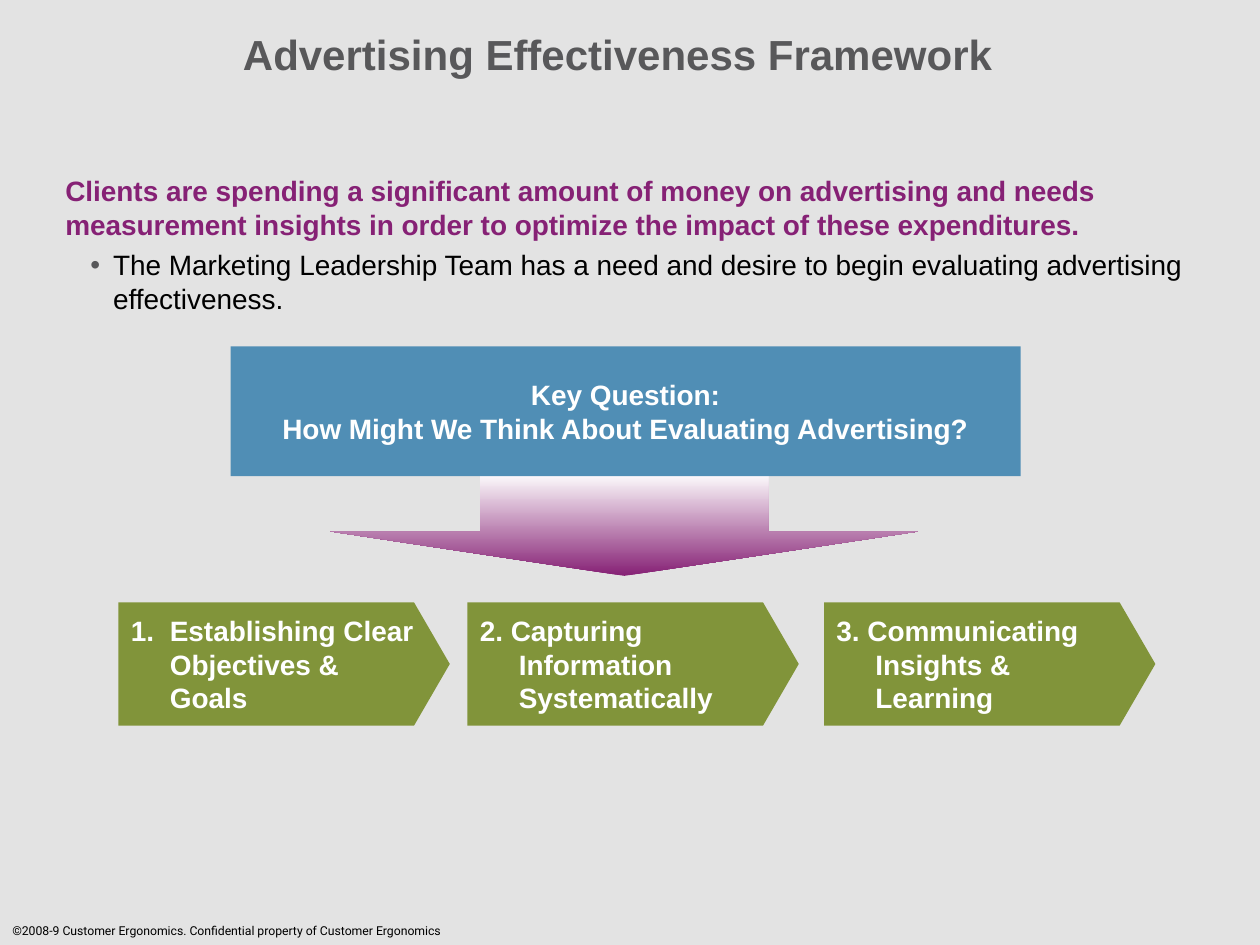
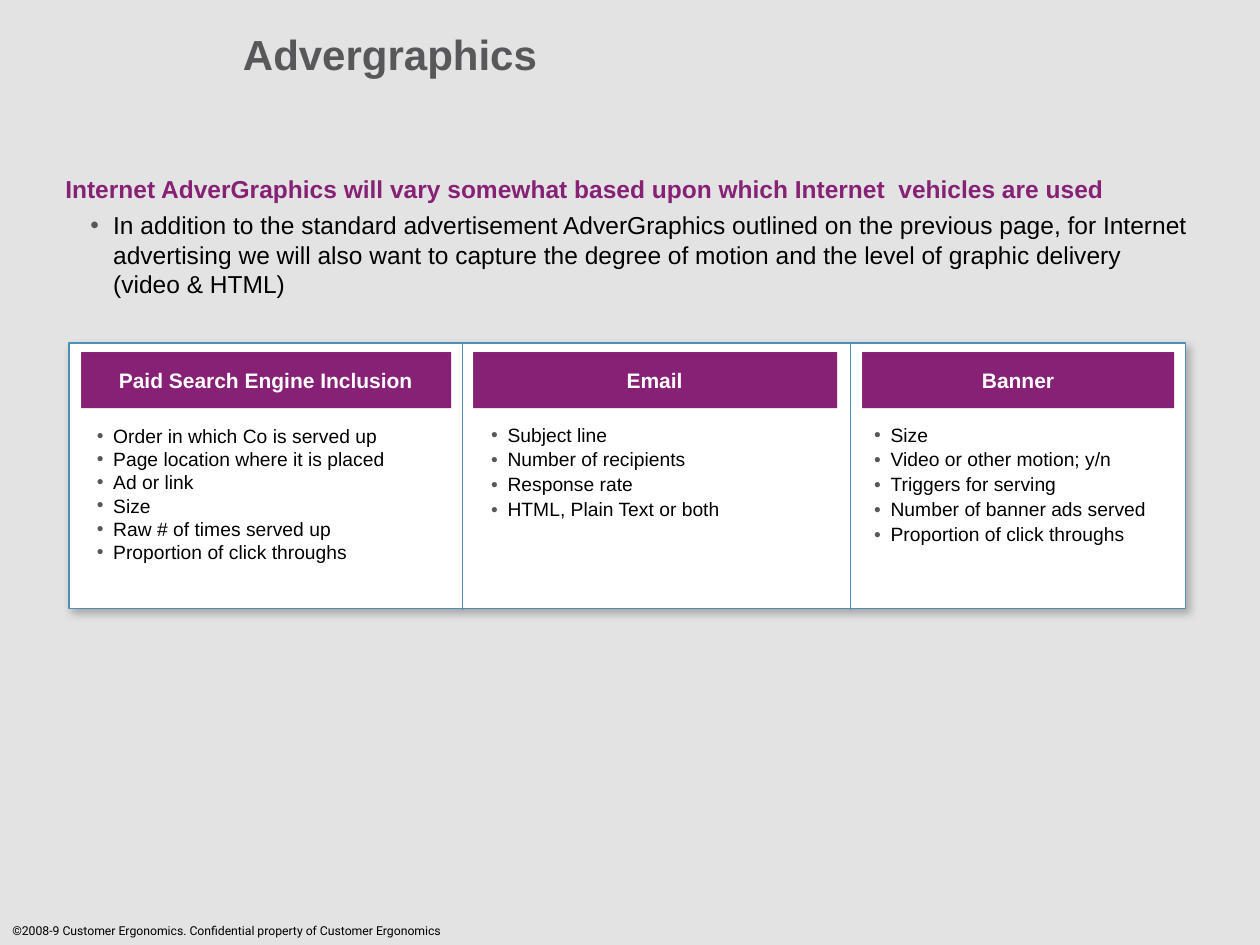
from lxml import etree
from pptx import Presentation
from pptx.dml.color import RGBColor
from pptx.enum.shapes import MSO_CONNECTOR, MSO_SHAPE
from pptx.enum.text import MSO_ANCHOR, PP_ALIGN
from pptx.oxml import parse_xml
from pptx.oxml.ns import nsdecls, qn
from pptx.util import Inches, Pt

BACKGROUND = "E3E3E3"
GRAY = "58585A"
PURPLE = "862175"
BLUE = "508EB5"
GREEN = "81943A"
BLACK = "000000"
WHITE = "FFFFFF"
FONT = "Arial"
FOOTER = "©2008-9 Customer Ergonomics. Confidential property of Customer Ergonomics"


def rgb(value):
    return RGBColor.from_string(value)


# Text
def add_run(p, text, size, color, bold=False, font=FONT):
    for i, line in enumerate(text.split("\n")):
        if i:
            p.add_line_break()
        r = p.add_run()
        r.text = line
        r.font.name = font
        r.font.size = Pt(size)
        r.font.bold = bold
        r.font.color.rgb = rgb(color)


def set_indent(p, left, first):
    pPr = p._p.get_or_add_pPr()
    pPr.set("marL", str(Inches(left)))
    pPr.set("indent", str(Inches(first)))
    return pPr


def set_bullet(p, left, first):
    pPr = set_indent(p, left, first)
    color = etree.SubElement(pPr, qn("a:buClr"))
    etree.SubElement(color, qn("a:srgbClr")).set("val", GRAY)
    etree.SubElement(pPr, qn("a:buFont")).set("typeface", FONT)
    etree.SubElement(pPr, qn("a:buChar")).set("char", "•")


def add_textbox(s, x, y, w, h):
    tf = s.shapes.add_textbox(Inches(x), Inches(y), Inches(w), Inches(h)).text_frame
    tf.word_wrap = True
    return tf


def add_body(s, heading, point, size):
    tf = add_textbox(s, 0.42, 1.33, 9.17, 1.3)
    add_run(tf.paragraphs[0], heading, size, PURPLE, bold=True)
    p = tf.add_paragraph()
    set_bullet(p, 0.38, -0.18)
    p.space_before = Pt(4)
    add_run(p, point, size, BLACK)


def add_list(s, x, y, w, h, items, line_spacing, gap):
    tf = add_textbox(s, x, y, w, h)
    for i, item in enumerate(items):
        p = tf.add_paragraph() if i else tf.paragraphs[0]
        set_bullet(p, 0.13, -0.13)
        p.line_spacing = line_spacing
        if i:
            p.space_before = Pt(gap)
        add_run(p, item, 11, BLACK)


# Shapes
def add_shape(s, kind, x, y, w, h, fill, adjustments=()):
    sp = s.shapes.add_shape(kind, Inches(x), Inches(y), Inches(w), Inches(h))
    for i, value in enumerate(adjustments):
        sp.adjustments[i] = value
    sp.shadow.inherit = False
    sp.fill.solid()
    sp.fill.fore_color.rgb = rgb(fill)
    sp.line.fill.background()
    return sp


def add_label(sp, text, size, align=PP_ALIGN.CENTER, wrap=False):
    tf = sp.text_frame
    tf.word_wrap = wrap
    tf.vertical_anchor = MSO_ANCHOR.MIDDLE
    p = tf.paragraphs[0]
    p.alignment = align
    add_run(p, text, size, WHITE, bold=True)
    return p


def add_gradient(sp, *colors):
    sp.fill.gradient()
    sp.fill.gradient_angle = 90
    for stop, color in zip(sp.fill.gradient_stops, colors):
        stop.color.rgb = rgb(color)


def add_drop_shadow(sp):
    spPr = sp._element.spPr
    spPr.remove(spPr.find(qn("a:effectLst")))
    spPr.append(parse_xml(
        f'<a:effectLst {nsdecls("a")}><a:outerShdw blurRad="{Pt(5)}" dist="{Pt(3)}" '
        f'dir="{55 * 60000}" algn="ctr" rotWithShape="0"><a:srgbClr val="{BLACK}">'
        '<a:alpha val="25000"/></a:srgbClr></a:outerShdw></a:effectLst>'))


def add_line(s, x1, y1, x2, y2):
    line = s.shapes.add_connector(
        MSO_CONNECTOR.STRAIGHT, Inches(x1), Inches(y1), Inches(x2), Inches(y2))
    line.line.color.rgb = rgb(BLUE)
    line.line.width = Pt(1)
    etree.SubElement(line._element.spPr, qn("a:effectLst"))


# Shared slide frame: background, footer and title
def add_slide(prs, title):
    s = prs.slides.add_slide(prs.slide_layouts[6])
    s.background.fill.solid()
    s.background.fill.fore_color.rgb = rgb(BACKGROUND)
    footer = add_textbox(s, 0, 7.28, 3.9, 0.22)
    add_run(footer.paragraphs[0], FOOTER, 7, BLACK, font="Roboto")
    tf = add_textbox(s, 1.83, 0, 8.17, 0.92)
    tf.margin_top = tf.margin_bottom = 0
    tf.vertical_anchor = MSO_ANCHOR.MIDDLE
    p = tf.paragraphs[0]
    p.line_spacing = 0.8
    add_run(p, title, 24, GRAY, bold=True)
    return s


def build_framework(prs):
    s = add_slide(prs, "Advertising Effectiveness Framework")
    add_body(s, "Clients are spending a significant amount of money on advertising and needs "
             "measurement insights in order to optimize the impact of these expenditures.",
             "The Marketing Leadership Team has a need and desire to begin evaluating "
             "advertising effectiveness.", 16)

    # Three steps
    steps = [(0.94, "1.\tEstablishing Clear Objectives & Goals"),
             (3.71, "2. Capturing Information Systematically"),
             (6.54, "3. Communicating Insights & Learning")]
    for x, text in steps:
        step = add_shape(s, MSO_SHAPE.PENTAGON, x, 4.78, 2.63, 0.98, GREEN, [0.29])
        set_indent(add_label(step, text, 16, PP_ALIGN.LEFT, wrap=True), 0.31, -0.31)

    # Arrow from the key question to the steps
    arrow = add_shape(s, MSO_SHAPE.DOWN_ARROW, 2.62, 3.75, 4.67, 0.82, PURPLE, [0.49, 0.43])
    add_gradient(arrow, PURPLE, WHITE)
    question = add_shape(s, MSO_SHAPE.RECTANGLE, 1.83, 2.75, 6.27, 1.03, BLUE)
    add_label(question, "Key Question:\nHow Might We Think About Evaluating Advertising?", 16)


def build_advergraphics(prs):
    s = add_slide(prs, "Advergraphics")
    add_body(s, "Internet AdverGraphics will vary somewhat based upon which Internet  vehicles "
             "are used",
             "In addition to the standard advertisement AdverGraphics outlined on the previous "
             "page, for Internet advertising we will also want to capture the degree of motion "
             "and the level of graphic delivery (video & HTML)", 14)

    # Panel with one column per vehicle
    panel = add_shape(s, MSO_SHAPE.RECTANGLE, 0.55, 2.72, 8.86, 2.11, WHITE)
    panel.line.color.rgb = rgb(BLUE)
    panel.line.width = Pt(1)
    add_drop_shadow(panel)

    # Header left and width, list left and width, line spacing, gap, heading, items
    columns = [
        (0.64, 2.94, 0.67, 2.92, 1, 0, "Paid Search Engine Inclusion",
         ["Order in which Co is served up", "Page location where it is placed", "Ad or link",
          "Size", "Raw # of times served up", "Proportion of click throughs"]),
        (3.75, 2.89, 3.8, 2.87, 0.95, 1.7, "Email",
         ["Subject line", "Number of recipients", "Response rate", "HTML, Plain Text or both"]),
        (6.84, 2.48, 6.84, 2.47, 0.95, 1.7, "Banner",
         ["Size", "Video or other motion; y/n", "Triggers for serving",
          "Number of banner ads served", "Proportion of click throughs"]),
    ]
    for x, w, list_x, list_w, spacing, gap, heading, items in columns:
        header = add_shape(s, MSO_SHAPE.BEVEL, x, 2.79, w, 0.45, PURPLE, [0])
        add_label(header, heading, 12)
        add_list(s, list_x, 3.32, list_w, 1.3, items, spacing, gap)
    for x in (3.67, 6.75):
        add_line(s, x, 2.72, x, 4.84)


def main():
    prs = Presentation()
    prs.slide_width, prs.slide_height = Inches(10), Inches(7.5)
    build_framework(prs)
    build_advergraphics(prs)
    prs.save("out.pptx")


if __name__ == "__main__":
    main()
